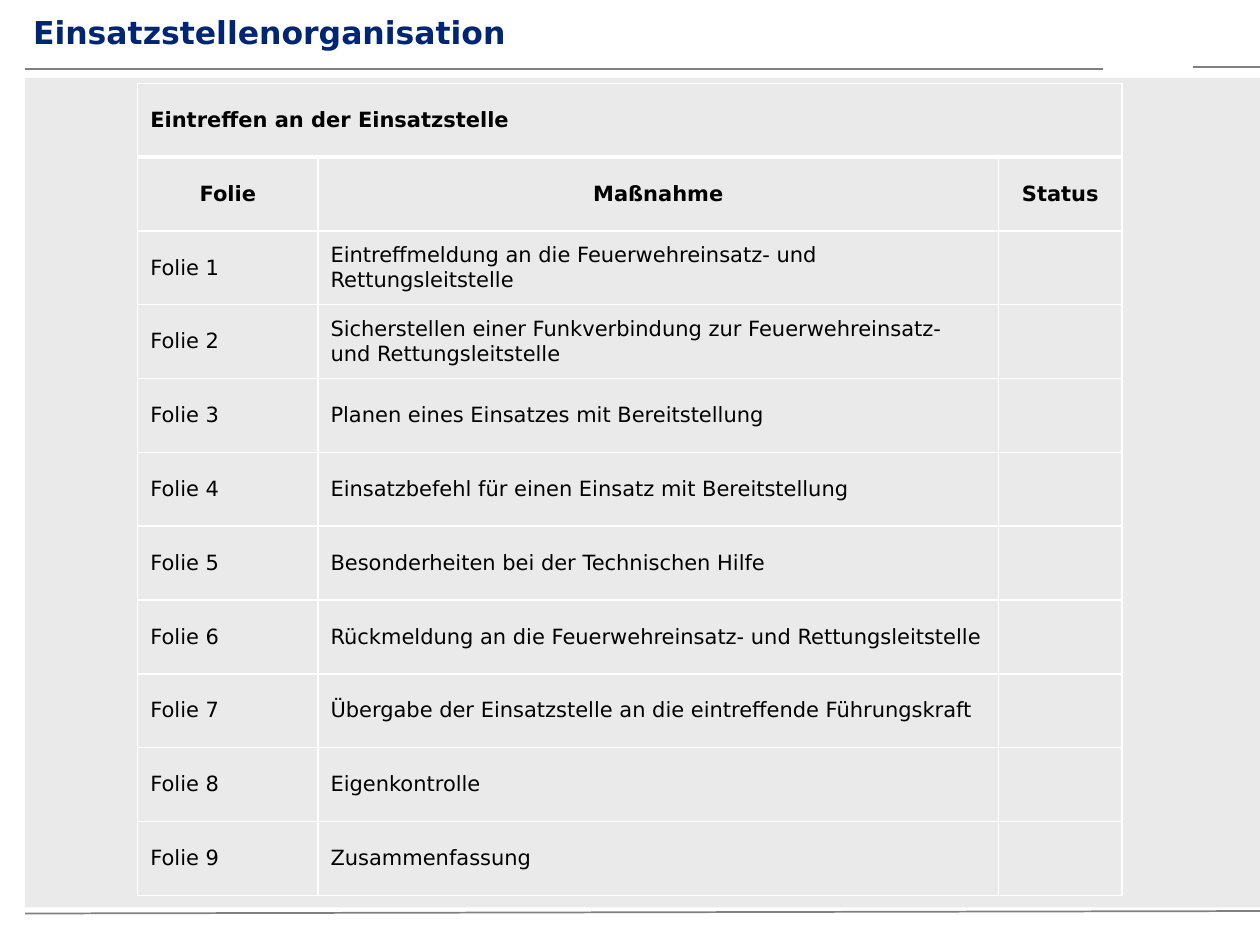
from lxml import etree
from pptx import Presentation
from pptx.dml.color import RGBColor
from pptx.enum.shapes import MSO_CONNECTOR, MSO_SHAPE
from pptx.enum.text import MSO_ANCHOR, PP_ALIGN
from pptx.oxml.ns import qn
from pptx.util import Pt

RECT = MSO_SHAPE.RECTANGLE
STRAIGHT = MSO_CONNECTOR.STRAIGHT
MIDDLE = MSO_ANCHOR.MIDDLE
LEFT, CENTER = PP_ALIGN.LEFT, PP_ALIGN.CENTER
FONT = "DejaVu Sans"
GRAY = "EAEAEA"


def rgb(value):
    return RGBColor.from_string(value)


def set_border(cell, tags, width):
    tcPr = cell._tc.get_or_add_tcPr()
    for i, tag in enumerate(tags):
        ln = etree.Element(qn("a:" + tag), w=str(Pt(width)))
        fill = etree.SubElement(ln, qn("a:solidFill"))
        etree.SubElement(fill, qn("a:srgbClr"), val="FFFFFF")
        tcPr.insert(i, ln)


prs = Presentation()
prs.slide_width, prs.slide_height = Pt(720), Pt(540)
s = prs.slides.add_slide(prs.slide_layouts[6])

# Content background
sp = s.shapes.add_shape(RECT, Pt(14.4), Pt(44.6), Pt(705.6), Pt(474))
sp.shadow.inherit = False
sp.fill.solid()
sp.fill.fore_color.rgb = rgb(GRAY)
sp.line.fill.background()

# Header and footer rules
for x1, y1, x2, y2 in [(14.4, 39.4, 630, 39.4),
                       (14.4, 522, 723, 520.6),
                       (722, 38.2, 682, 38.2)]:
    line = s.shapes.add_connector(STRAIGHT, Pt(x1), Pt(y1), Pt(x2), Pt(y2))
    line.line.color.rgb = rgb("808080")
    line.line.width = Pt(1)
    etree.SubElement(line._element.spPr, qn("a:effectLst"))

# Table of measures
measures = [
    "Eintreffmeldung an die Feuerwehreinsatz- und Rettungsleitstelle",
    "Sicherstellen einer Funkverbindung zur Feuerwehreinsatz- und Rettungsleitstelle",
    "Planen eines Einsatzes mit Bereitstellung",
    "Einsatzbefehl für einen Einsatz mit Bereitstellung",
    "Besonderheiten bei der Technischen Hilfe",
    "Rückmeldung an die Feuerwehreinsatz- und Rettungsleitstelle",
    "Übergabe der Einsatzstelle an die eintreffende Führungskraft",
    "Eigenkontrolle",
    "Zusammenfassung",
]
rows = [("Eintreffen an der Einsatzstelle", "", ""),
        ("Folie", "Maßnahme", "Status")]
rows += [(f"Folie {n}", text, "") for n, text in enumerate(measures, 1)]
widths = [103, 389, 70.5]
row_height = 42.2

table = s.shapes.add_table(len(rows), len(widths), Pt(78.7), Pt(47.6),
                           Pt(sum(widths)), Pt(row_height * len(rows))).table
for column, width in zip(table.columns, widths):
    column.width = Pt(width)
for i, texts in enumerate(rows):
    table.rows[i].height = Pt(row_height)
    for j, text in enumerate(texts):
        cell = table.cell(i, j)
        cell.fill.solid()
        cell.fill.fore_color.rgb = rgb(GRAY)
        cell.vertical_anchor = MIDDLE
        cell.text_frame.text = text
        p = cell.text_frame.paragraphs[0]
        p.alignment = CENTER if i == 1 else LEFT
        p.font.name = FONT
        p.font.size = Pt(12)
        p.font.bold = i < 2
        p.font.color.rgb = rgb("000000")
        # Thick rule between the heading row and the column heads
        set_border(cell, ["lnB"], 3 if i == 0 else 1)
        set_border(cell, ["lnL", "lnR"], 1)
        tcPr = cell._tc.tcPr
        bottom = tcPr.find(qn("a:lnB"))
        set_border(cell, ["lnT"], 3 if i == 1 else 1)
        bottom.addprevious(tcPr.find(qn("a:lnT")))
table.cell(0, 0).merge(table.cell(0, 2))

# Title
tf = s.shapes.add_textbox(Pt(18.9), Pt(7.5), Pt(594), Pt(29.5)).text_frame
tf.word_wrap = True
tf.margin_left = tf.margin_top = tf.margin_right = tf.margin_bottom = 0
tf.text = "Einsatzstellenorganisation"
r = tf.paragraphs[0].runs[0]
r.font.name = FONT
r.font.size = Pt(18)
r.font.bold = True
r.font.color.rgb = rgb("002673")

prs.save("out.pptx")
